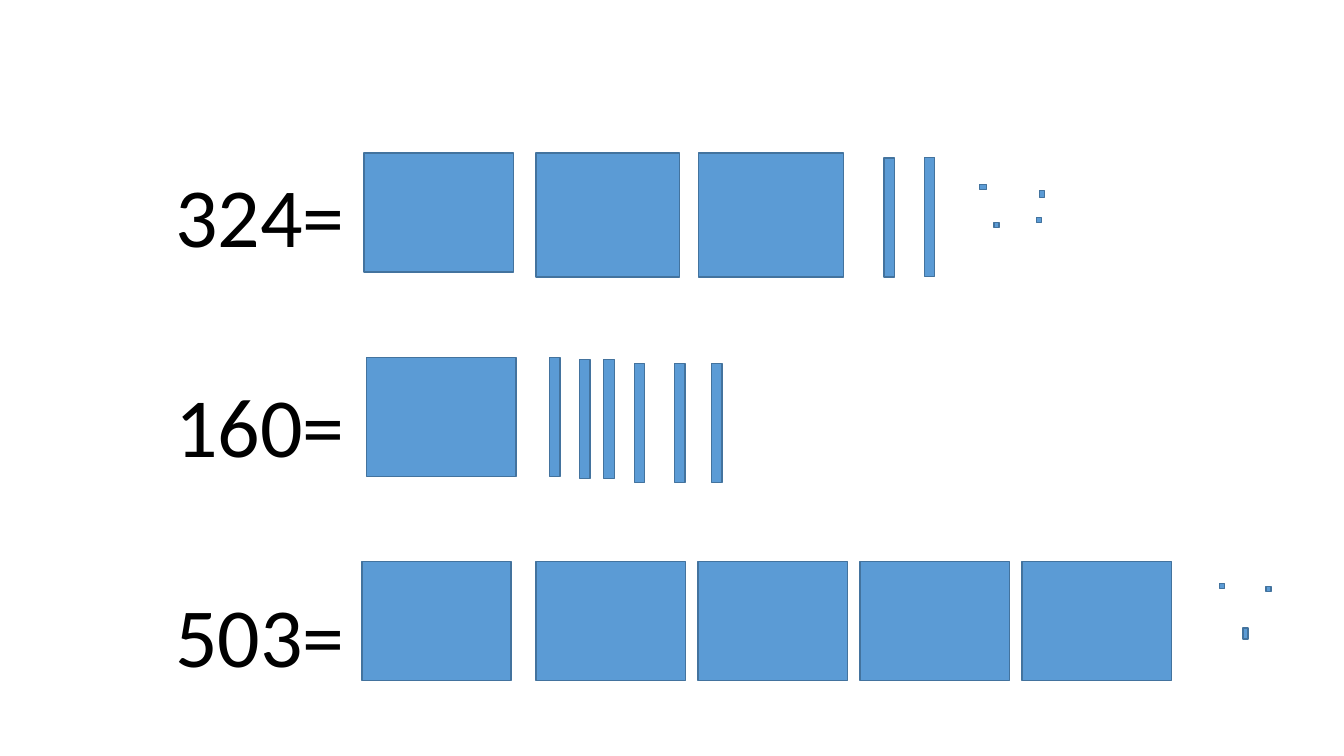
from pptx import Presentation
from pptx.dml.color import RGBColor
from pptx.enum.shapes import MSO_SHAPE
from pptx.enum.text import MSO_ANCHOR, MSO_AUTO_SIZE, PP_ALIGN
from pptx.util import Pt

COLORS = {"fill": "5B9BD5", "line": "43739E", "text": "000000"}
LEFT, TOP, PITCH = 118, 109.4, 145.8
LABEL = (140, 84)
FLAT = (106.6, 85)
ROD = (7.5, 85)
UNIT = (3.6, 3.6)

ROWS = [
    {"label": "324=", "drop": 0,
     "flats": [(142, 0), (265, 0, 102.2, 88.6), (381, 0, 103.7, 88.6)],
     "rods": [(513.4, 3.6), (542.2, 2.9)],
     "units": [(581.8, 22.3, 5, 3.6), (592, 49.7), (624.3, 26.6, 3.6, 5),
               (622.2, 46.1)]},
    {"label": "160=", "drop": 4.2,
     "flats": [(144, 0)],
     "rods": [(274.4, 0), (296, 1.4), (313.3, 1.4), (335, 4.3),
              (363.7, 4.3), (390.3, 4.3)],
     "units": []},
    {"label": "503=", "drop": 8.4,
     "flats": [(140.5, 0)] + [(265 + 115.7 * n, 0) for n in range(4)],
     "rods": [],
     "units": [(753.2, 15.8), (786.3, 18), (769.8, 47.5, 3.6, 8)]},
]


def color(name):
    return RGBColor.from_string(COLORS[name])


def add_block(slide, x, y, w, h):
    block = slide.shapes.add_shape(
        MSO_SHAPE.RECTANGLE, Pt(x), Pt(y), Pt(w), Pt(h))
    block.shadow.inherit = False
    block.fill.solid()
    block.fill.fore_color.rgb = color("fill")
    block.line.color.rgb = color("line")
    block.line.width = Pt(1)


def set_label(box, text, x, y):
    box.left, box.top = Pt(x), Pt(y)
    box.width, box.height = [Pt(size) for size in LABEL]
    frame = box.text_frame
    frame.text = text
    frame.word_wrap = True
    frame.auto_size = MSO_AUTO_SIZE.NONE
    frame.vertical_anchor = MSO_ANCHOR.BOTTOM
    para = frame.paragraphs[0]
    para.alignment = PP_ALIGN.LEFT
    para.line_spacing = 0.9
    font = para.runs[0].font
    font.name, font.size = "Calibri", Pt(60)
    font.color.rgb = color("text")


def add_row(slide, box, row, left, top):
    set_label(box, row["label"], left, top + row["drop"])
    for kind, size in (("flats", FLAT), ("rods", ROD), ("units", UNIT)):
        for x, y, *own in row[kind]:
            add_block(slide, left + x, top + y, *(own or size))


def main():
    deck = Presentation()
    deck.slide_width, deck.slide_height = Pt(960), Pt(540)
    slide = deck.slides.add_slide(deck.slide_layouts[5])
    for index, row in enumerate(ROWS):
        if index == 0:
            box = slide.shapes.title
        else:
            box = slide.shapes.add_textbox(0, 0, 0, 0)
        add_row(slide, box, row, LEFT, TOP + PITCH * index)
    deck.save("out.pptx")


if __name__ == "__main__":
    main()
